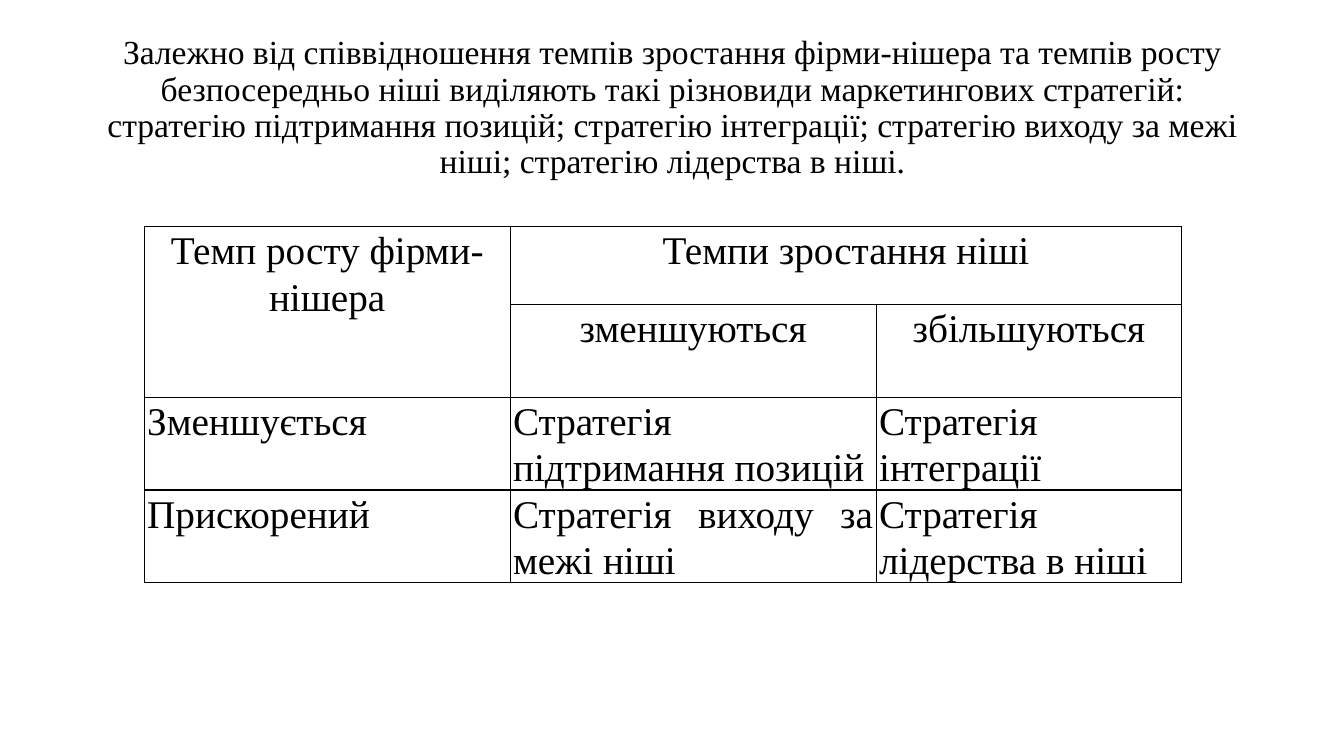
from lxml import etree
from pptx import Presentation
from pptx import util as u
from pptx.dml import color
from pptx.enum import text
from pptx.oxml import ns

TITLE = (
    "Залежно від співвідношення темпів зростання фірми-нішера та темпів росту "
    "безпосередньо ніші виділяють такі різновиди маркетингових стратегій: "
    "стратегію підтримання позицій; стратегію інтеграції; стратегію виходу за межі "
    "ніші; стратегію лідерства в ніші."
)
ROWS = [
    ["Темп росту фірми-нішера", "Темпи зростання ніші", None],
    [None, "зменшуються", "збільшуються"],
    ["Зменшується", "Стратегія підтримання позицій", "Стратегія інтеграції"],
    ["Прискорений", "Стратегія виходу за межі ніші", "Стратегія лідерства в ніші"],
]
HEADER_ROWS = 2
MERGES = [((0, 0), (1, 0)), ((0, 1), (0, 2))]
COLUMN_WIDTHS = [3.63, 3.63, 3.03]
ROW_HEIGHTS = [0.77, 0.92, 0.92, 0.92]
TABLE_LEFT, TABLE_TOP = 1.43, 2.25
TITLE_PLACE = {"left": 0.92, "top": 0.4, "width": 11.5, "height": 1.71}
TITLE_MARGINS = {"margin_left": 0.1, "margin_right": 0.1, "margin_top": 0.05, "margin_bottom": 0.41}
CELL_MARGINS = {"margin_left": 0.03, "margin_right": 0.03, "margin_top": 0, "margin_bottom": 0}
FONT = "Times New Roman"
BLACK, WHITE = "000000", "FFFFFF"


def rgb(value):
    return color.RGBColor.from_string(value)


def apply(target, values):
    for name, value in values.items():
        setattr(target, name, value)


def in_inches(values):
    return {name: u.Inches(value) for name, value in values.items()}


def write(para, content, size, align, spacing):
    apply(para, {"alignment": align, "line_spacing": spacing})
    span = para.add_run()
    span.text = content
    apply(span.font, {"name": FONT, "size": u.Pt(size), "bold": False})
    span.font.color.rgb = rgb(BLACK)


def add_borders(cell):
    properties = cell._tc.get_or_add_tcPr()
    for position, side in enumerate(("lnL", "lnR", "lnT", "lnB")):
        line = etree.Element(ns.qn(f"a:{side}"), w=str(u.Pt(1)))
        fill = etree.SubElement(line, ns.qn("a:solidFill"))
        etree.SubElement(fill, ns.qn("a:srgbClr"), val=BLACK)
        properties.insert(position, line)


def add_title(page):
    box = page.shapes.title
    apply(box, in_inches(TITLE_PLACE))
    frame = box.text_frame
    apply(frame, in_inches(TITLE_MARGINS))
    apply(frame, {"word_wrap": True, "auto_size": text.MSO_AUTO_SIZE.NONE,
                  "vertical_anchor": text.MSO_ANCHOR.MIDDLE})
    write(frame.paragraphs[0], TITLE, 24, text.PP_ALIGN.CENTER, 0.9)


def add_strategy_table(page):
    place = [u.Inches(value) for value in
             (TABLE_LEFT, TABLE_TOP, sum(COLUMN_WIDTHS), sum(ROW_HEIGHTS))]
    table = page.shapes.add_table(len(ROWS), len(COLUMN_WIDTHS), *place).table
    apply(table, {"first_row": False, "horz_banding": False})
    for column, width in zip(table.columns, COLUMN_WIDTHS):
        column.width = u.Inches(width)
    for row, height in zip(table.rows, ROW_HEIGHTS):
        row.height = u.Inches(height)
    for start, end in MERGES:
        table.cell(*start).merge(table.cell(*end))
    for r, values in enumerate(ROWS):
        align = text.PP_ALIGN.CENTER if r < HEADER_ROWS else text.PP_ALIGN.JUSTIFY
        for c, content in enumerate(values):
            cell = table.cell(r, c)
            apply(cell, in_inches(CELL_MARGINS))
            cell.fill.solid()
            cell.fill.fore_color.rgb = rgb(WHITE)
            add_borders(cell)
            if content:
                write(cell.text_frame.paragraphs[0], content, 28, align, 1.07)


def main():
    deck = Presentation()
    apply(deck, {"slide_width": u.Inches(13.33), "slide_height": u.Inches(7.5)})
    page = deck.slides.add_slide(deck.slide_layouts.get_by_name("Title Only"))
    add_title(page)
    add_strategy_table(page)
    deck.save("out.pptx")


if __name__ == "__main__":
    main()
